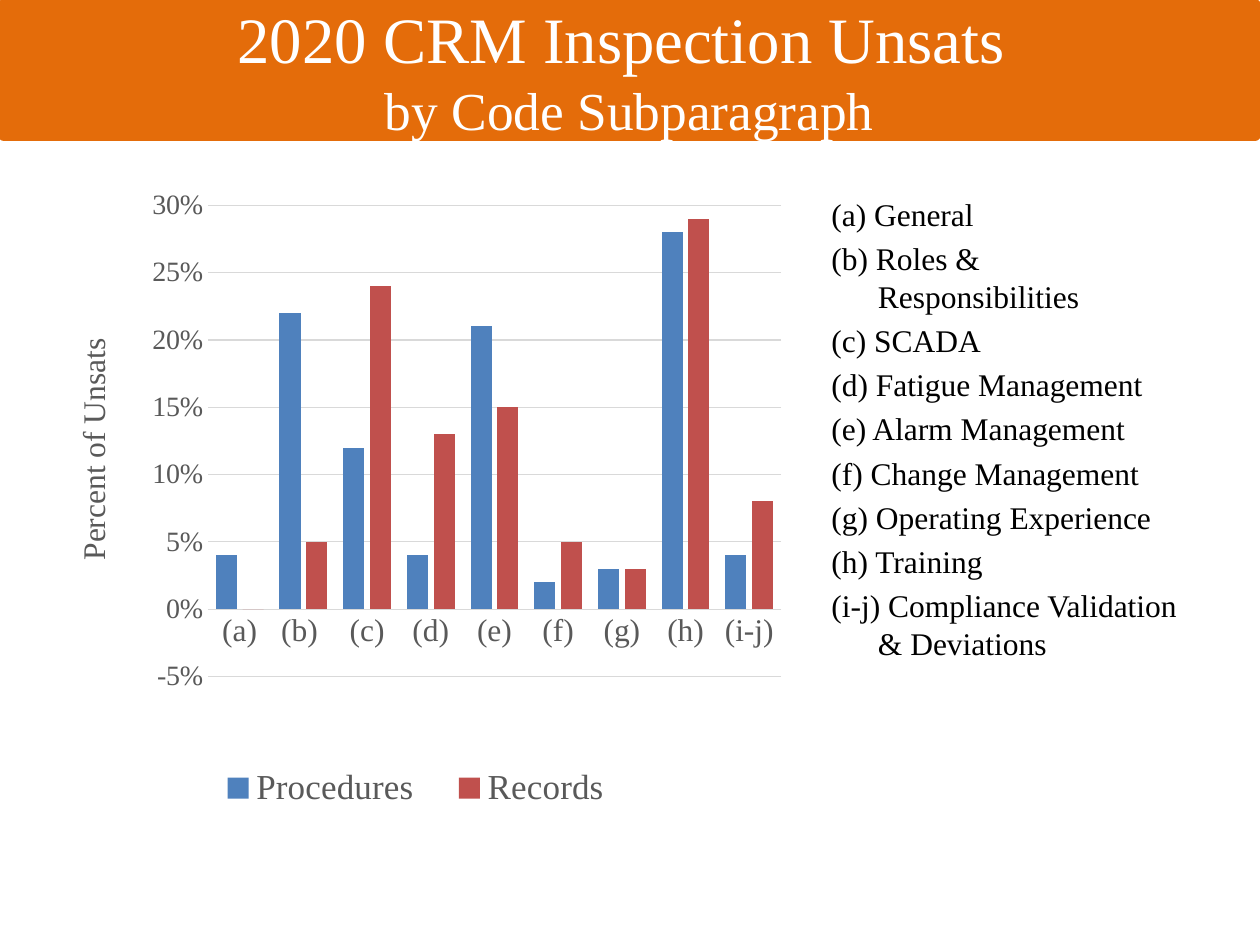
import pptx
import pptx.chart.data
import pptx.dml.color
import pptx.enum.chart
import pptx.enum.shapes
import pptx.enum.text
import pptx.oxml
import pptx.util
from pptx.util import Inches, Pt

COLORS = {
    "banner": "E46C0A",
    "banner_text": "FFFFFF",
    "body": "000000",
    "axis_text": "595959",
    "grid": "D9D9D9",
    "Procedures": "4F81BD",
    "Records": "C0504D",
}

BANNER_LINES = [("2020 CRM Inspection Unsats ", 37), ("by Code Subparagraph", 30.5)]

SUBPARAGRAPHS = [
    "(a) General",
    "(b) Roles & Responsibilities",
    "(c) SCADA",
    "(d) Fatigue Management",
    "(e) Alarm Management",
    "(f) Change Management",
    "(g) Operating Experience",
    "(h) Training",
    "(i-j) Compliance Validation & Deviations",
]

CODES = ["(a)", "(b) ", "(c)", "(d)", "(e)", "(f)", "(g)", "(h)", "(i-j)"]
UNSATS = {
    "Procedures": [0.04, 0.22, 0.12, 0.04, 0.21, 0.02, 0.03, 0.28, 0.04],
    "Records": [0, 0.05, 0.24, 0.13, 0.15, 0.05, 0.03, 0.29, 0.08],
}

CHART_NS = "http://schemas.openxmlformats.org/drawingml/2006/chart"


class SlideBuilder:
    font_name = "Times New Roman"

    def __init__(self, slide):
        self.slide = slide

    def color(self, name):
        return pptx.dml.color.RGBColor.from_string(COLORS[name])

    def style(self, font, size, color):
        font.name = self.font_name
        font.size = Pt(size)
        font.bold = False
        font.color.rgb = self.color(color)

    def banner(self, lines, left, top, width, height):
        banner = self.slide.shapes.add_shape(
            pptx.enum.shapes.MSO_SHAPE.RECTANGLE, left, top, width, height)
        banner.shadow.inherit = False
        banner.fill.solid()
        banner.fill.fore_color.rgb = self.color("banner")
        banner.line.color.rgb = self.color("banner")
        banner.line.width = Pt(6.75)
        frame = banner.text_frame
        frame.word_wrap = True
        frame.vertical_anchor = pptx.enum.text.MSO_ANCHOR.MIDDLE
        frame.text = "\n".join(text for text, _ in lines)
        for paragraph, (_, size) in zip(frame.paragraphs, lines):
            paragraph.alignment = pptx.enum.text.PP_ALIGN.CENTER
            self.style(paragraph.runs[0].font, size, "banner_text")

    def hanging_list(self, entries, left, top, width, height):
        frame = self.slide.shapes.add_textbox(left, top, width, height).text_frame
        frame.word_wrap = True
        frame.text = "\n".join(entries)
        for index, paragraph in enumerate(frame.paragraphs):
            properties = paragraph._p.get_or_add_pPr()
            properties.set("marL", str(Inches(0.37)))
            properties.set("indent", str(-Inches(0.37)))
            if index:
                paragraph.space_before = Pt(3.6)
            self.style(paragraph.runs[0].font, 18, "body")

    def place(self, part, index, frame, left, top, width=None, height=None, target=""):
        """Fix a chart part at lengths measured from the chart's corner."""
        for layout in part.findall(pptx.oxml.ns.qn("c:layout")):
            part.remove(layout)
        lengths = {"x": left / frame.width, "y": top / frame.height}
        if width:
            lengths.update(w=width / frame.width, h=height / frame.height)
        sizes = "".join(f'<c:{key} val="{share}"/>' for key, share in lengths.items())
        part.insert(index, pptx.oxml.parse_xml(
            f'<c:layout xmlns:c="{CHART_NS}"><c:manualLayout>{target}'
            f'<c:xMode val="edge"/><c:yMode val="edge"/>{sizes}'
            "</c:manualLayout></c:layout>"))

    def column_chart(self, codes, unsats, left, top, width, height):
        chart_data = pptx.chart.data.CategoryChartData(number_format="0%")
        chart_data.categories = codes
        for name, shares in unsats.items():
            chart_data.add_series(name, shares)
        frame = self.slide.shapes.add_chart(
            pptx.enum.chart.XL_CHART_TYPE.COLUMN_CLUSTERED,
            left, top, width, height, chart_data)
        chart = frame.chart
        chart.has_title = False
        self.style(chart.font, 10, "body")

        # Columns
        plot = chart.plots[0]
        plot.gap_width = 75
        plot.overlap = -27
        plot.vary_by_categories = False
        for series in plot.series:
            series.format.fill.solid()
            series.format.fill.fore_color.rgb = self.color(series.name)
        self.place(chart._chartSpace.chart.plotArea, 0, frame,
                   Inches(1.18), Inches(0.13), Inches(4.55), Inches(3.74),
                   target='<c:layoutTarget val="inner"/>')

        # Axes
        codes_axis, share_axis = chart.category_axis, chart.value_axis
        for axis, size in ((codes_axis, 18), (share_axis, 16)):
            axis.major_tick_mark = pptx.enum.chart.XL_TICK_MARK.NONE
            axis.minor_tick_mark = pptx.enum.chart.XL_TICK_MARK.NONE
            self.style(axis.tick_labels.font, size, "axis_text")
        share_axis.minimum_scale = -0.05
        share_axis.maximum_scale = 0.3
        share_axis.major_unit = 0.05
        share_axis.tick_labels.number_format = "0%"
        share_axis.tick_labels.number_format_is_linked = False
        share_axis.format.line.fill.background()
        share_axis.has_major_gridlines = True
        for line in (codes_axis.format.line, share_axis.major_gridlines.format.line):
            line.color.rgb = self.color("grid")
            line.width = Pt(0.75)
        title = share_axis.axis_title
        title.text_frame.text = "Percent of Unsats"
        self.style(title.text_frame.paragraphs[0].runs[0].font, 18, "axis_text")
        self.place(title._element, 1, frame, Inches(0.07), Inches(1.14))

        # Legend
        chart.has_legend = True
        chart.legend.position = pptx.enum.chart.XL_LEGEND_POSITION.BOTTOM
        chart.legend.include_in_layout = False
        self.style(chart.legend.font, 20, "axis_text")
        self.place(chart.legend._element, 1, frame,
                   Inches(1.07), Inches(4.53), Inches(3.52), Inches(0.45))


def main():
    deck = pptx.Presentation()
    deck.slide_width, deck.slide_height = Inches(10), Inches(7.5)
    builder = SlideBuilder(deck.slides.add_slide(deck.slide_layouts[6]))
    builder.hanging_list(SUBPARAGRAPHS, Inches(6.5), Inches(1.5), Inches(3), Inches(4.42))
    builder.banner(BANNER_LINES, Inches(0.03), Inches(0.04), Inches(9.93), Inches(1.03))
    builder.column_chart(CODES, UNSATS, Inches(0.47), Inches(1.5), Inches(5.78), Inches(5.08))
    deck.save("out.pptx")


if __name__ == "__main__":
    main()
